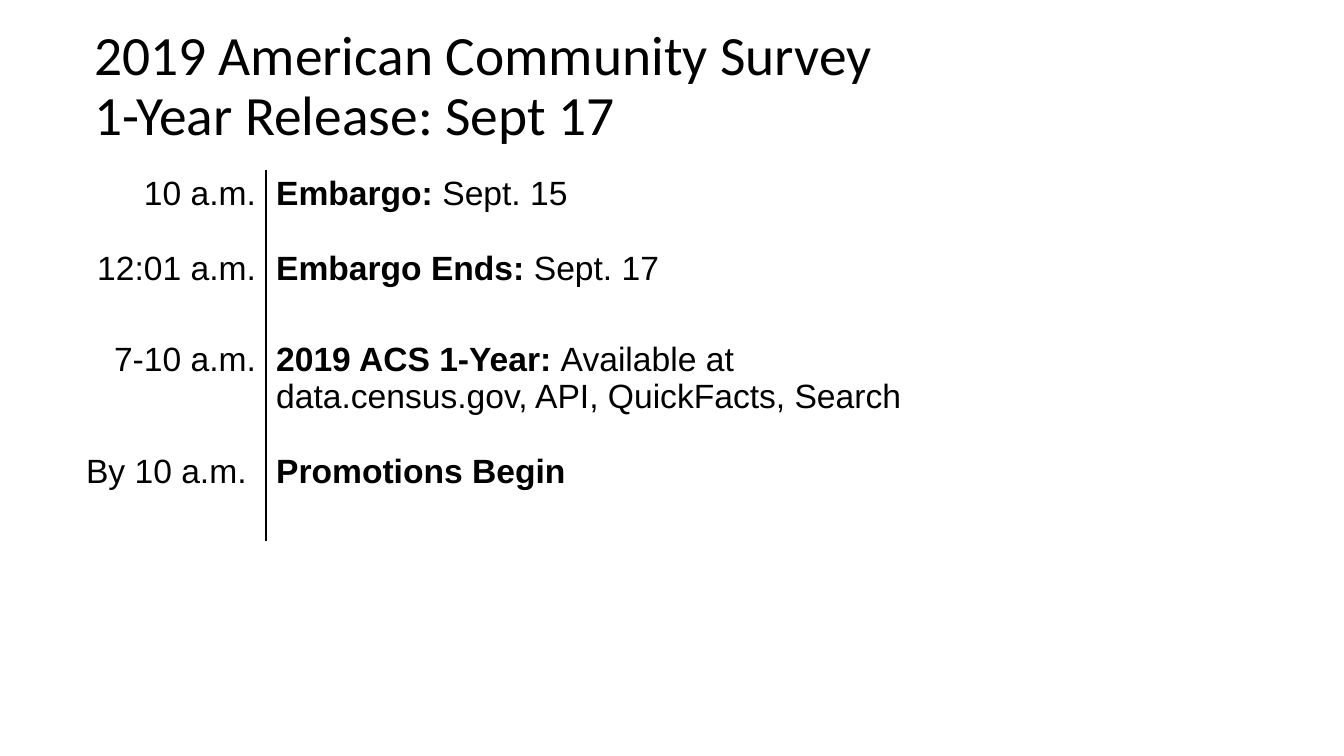
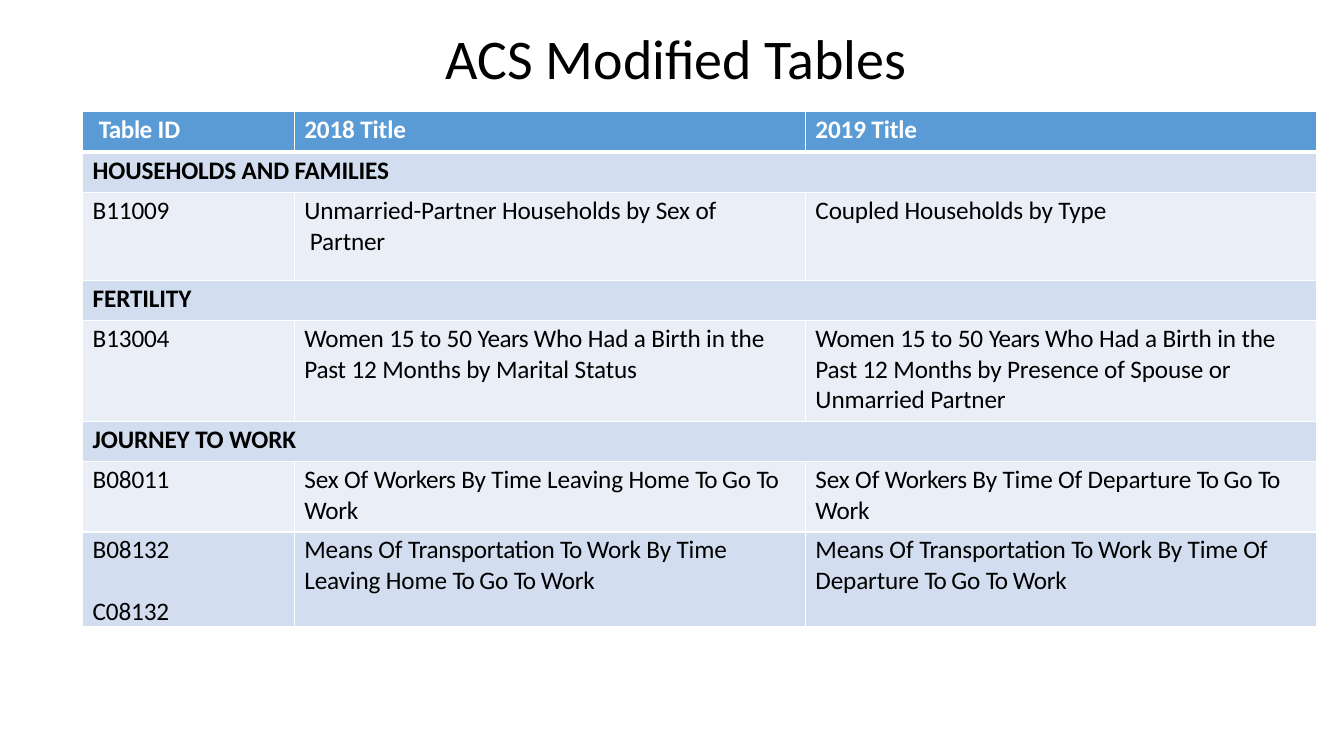
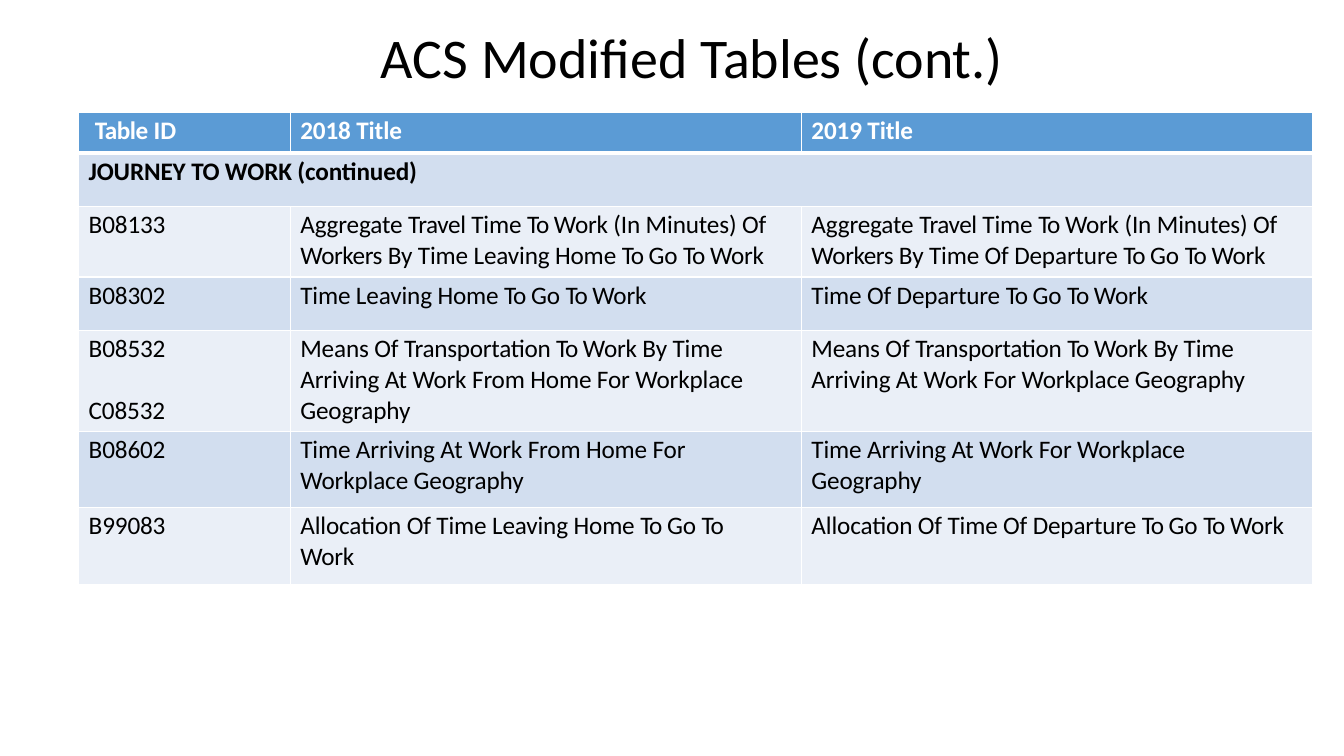
from itertools import groupby

from lxml import etree
from pptx import Presentation, util as u
from pptx.dml.color import RGBColor
from pptx.enum import text as t
from pptx.oxml import ns

BLACK, WHITE, BLUE = "000000", "FFFFFF", "5B9BD5"
BANDS = ["EAEFF7", "D2DEEF"]
TRACKING = {"To": -80, "Years": -40, "Workers": -30, "Travel": -30, "TO": -30, "Table": -30,
            "Work": -20, "Women": -20, "Transportation": -20, "Past": -20}

presentation = Presentation()
presentation.slide_width = u.Inches(13.33)
presentation.slide_height = u.Inches(7.5)
column = presentation.slide_width / 100
row = presentation.slide_height / 100
blank = presentation.slide_layouts[6]


def write(paragraph, words, size=18, font="Calibri", color=BLACK, bold=False, track=False):
    for number, line in enumerate(words.split("\n")):
        if number:
            paragraph.add_line_break()
        parts = line.split(" ")
        spaced = [part + " " for part in parts[:-1]] + parts[-1:]
        for spacing, group in groupby(spaced, lambda part: TRACKING.get(part.strip(), -10) if track else 0):
            run = paragraph.add_run()
            run.text = "".join(group)
            run.font.size = u.Pt(size)
            run.font.name = font
            run.font.bold = bold
            run.font.color.rgb = RGBColor.from_string(color)
            if spacing:
                run.font._element.set("spc", str(spacing))


def border(cell, color, **widths):
    properties = cell._tc.get_or_add_tcPr()
    sides = [side for side in "LRTB" if side in widths]
    for position, side in enumerate(sides):
        line = etree.Element(ns.qn(f"a:ln{side}"), w=str(u.Pt(widths[side])))
        fill = etree.SubElement(line, ns.qn("a:solidFill"))
        etree.SubElement(fill, ns.qn("a:srgbClr"), val=color)
        properties.insert(position, line)


schedule = [
    (16.93, 0.05,
     [("10 a.m.", 0), ("12:01 a.m.", 1)],
     [("Embargo: ", "Sept. 15"), ("Embargo Ends: ", "Sept. 17")]),
    (32, 0.42,
     [("7-10 a.m.", 0), ("By 10 a.m. ", 2)],
     [("2019 ACS 1-Year: ", "Available at data.census.gov, API, QuickFacts, Search"),
      ("Promotions Begin", "")]),
]
header = (5.33, "Table ID", "2018 Title", "2019 Title")
modified = [
    header,
    (5.33, "HOUSEHOLDS AND FAMILIES"),
    (11.6, "B11009", "Unmarried-Partner Households by Sex of\n Partner", "Coupled Households by Type"),
    (5.33, "FERTILITY"),
    (13.33, "B13004",
     "Women 15 to 50 Years Who Had a Birth in the\nPast 12 Months by Marital Status",
     "Women 15 to 50 Years Who Had a Birth in the\nPast 12 Months by Presence of Spouse or\nUnmarried Partner"),
    (5.33, "JOURNEY TO WORK"),
    (9.33, "B08011",
     "Sex Of Workers By Time Leaving Home To Go To\nWork",
     "Sex Of Workers By Time Of Departure To Go To\nWork"),
    (11.6, "B08132/C08132",
     "Means Of Transportation To Work By Time\nLeaving Home To Go To Work",
     "Means Of Transportation To Work By Time Of\nDeparture To Go To Work"),
]
continued = [
    header,
    (7.07, "JOURNEY TO WORK (continued)"),
    (9.33, "B08133",
     "Aggregate Travel Time To Work (In Minutes) Of\nWorkers By Time Leaving Home To Go To Work",
     "Aggregate Travel Time To Work (In Minutes) Of\nWorkers By Time Of Departure To Go To Work"),
    (7.07, "B08302", "Time Leaving Home To Go To Work", "Time Of Departure To Go To Work"),
    (13.33, "B08532/C08532",
     "Means Of Transportation To Work By Time\nArriving At Work From Home For Workplace\nGeography",
     "Means Of Transportation To Work By Time\nArriving At Work For Workplace Geography"),
    (10.13, "B08602",
     "Time Arriving At Work From Home For\nWorkplace Geography",
     "Time Arriving At Work For Workplace\nGeography"),
    (10.13, "B99083",
     "Allocation Of Time Leaving Home To Go To\nWork",
     "Allocation Of Time Of Departure To Go To Work"),
]
pages = [
    ("2019 American Community Survey \n1-Year Release: Sept 17", 39.6, 0.9, (7, 3.2, 66, 16.67),
     schedule, (-3.75, 22.53), (23.55, 53.93)),
    ("ACS Modified Tables", 40, 1, (33.15, 2.93, 37.95, 9.2),
     modified, (6.15, 14.8), (15.75, 38.03, 38.03)),
    ("ACS Modified Tables (cont.)", 40, 1, (28.35, 2.8, 47.03, 9.2),
     continued, (5.85, 14.93), (15.75, 38.03, 38.03)),
]

for title, size, spacing, (left, top, width, height), lines, (table_left, table_top), widths in pages:
    slide = presentation.slides.add_slide(blank)
    box = slide.shapes.add_textbox(int(left * column), int(top * row), int(width * column), int(height * row))
    frame = box.text_frame
    frame.word_wrap = True
    frame.vertical_anchor = t.MSO_ANCHOR.MIDDLE
    frame.margin_left = frame.margin_right = frame.margin_top = frame.margin_bottom = 0
    frame.paragraphs[0].line_spacing = spacing
    write(frame.paragraphs[0], title, size=size)

    heights = [line[0] for line in lines]
    table = slide.shapes.add_table(
        len(lines), len(widths), int(table_left * column), int(table_top * row),
        int(sum(widths) * column), int(sum(heights) * row)).table
    table.first_row = table.horz_banding = False
    table._tbl.tblPr.find(ns.qn("a:tableStyleId")).text = "{2D5ABB26-0587-4C30-8999-92F81FD0307C}"
    for table_column, width in zip(table.columns, widths):
        table_column.width = int(width * column)
    for table_row, height in zip(table.rows, heights):
        table_row.height = int(height * row)

    if lines is schedule:
        for index, (_, margin, times, events) in enumerate(lines):
            time_cell, event_cell = table.rows[index].cells
            for cell in (time_cell, event_cell):
                cell.margin_top = u.Inches(margin)
                cell.fill.background()
            for number, (time, gap) in enumerate(times):
                frame = time_cell.text_frame
                paragraph = frame.add_paragraph() if number else frame.paragraphs[0]
                paragraph.alignment = t.PP_ALIGN.RIGHT
                if gap:
                    paragraph.space_before = u.Pt(26.8 * gap)
                write(paragraph, time, size=24, font="Arial")
            for number, (name, detail) in enumerate(events):
                frame = event_cell.text_frame
                paragraph = frame.add_paragraph() if number else frame.paragraphs[0]
                if number:
                    paragraph.space_before = u.Pt(26.8)
                write(paragraph, name, size=24, font="Arial", bold=True)
                if detail:
                    write(paragraph, detail, size=24, font="Arial")
            border(time_cell, BLACK, R=1)
            border(event_cell, BLACK, L=1)
        continue

    for index, (_, *texts) in enumerate(lines):
        cells = table.rows[index].cells
        section = len(texts) == 1
        for cell in cells:
            cell.margin_left = u.Inches(0.1)
            cell.margin_right = cell.margin_bottom = 0
            cell.margin_top = u.Inches(0.03)
            cell.fill.solid()
            cell.fill.fore_color.rgb = RGBColor.from_string(BANDS[index % 2] if index else BLUE)
            border(cell, WHITE, L=1, R=1, T=3 if index == 1 else 1, B=1 if index else 3)
        if section:
            cells[0].merge(cells[2])
        if index == 0:
            cells[0].margin_left = u.Inches(0.16)
        for cell, words in zip(cells, texts):
            for number, part in enumerate(words.split("/")):
                frame = cell.text_frame
                paragraph = frame.add_paragraph() if number else frame.paragraphs[0]
                if number:
                    paragraph.space_before = u.Pt(22)
                write(paragraph, part, color=BLACK if index else WHITE, bold=section or index == 0, track=True)

presentation.save("out.pptx")
